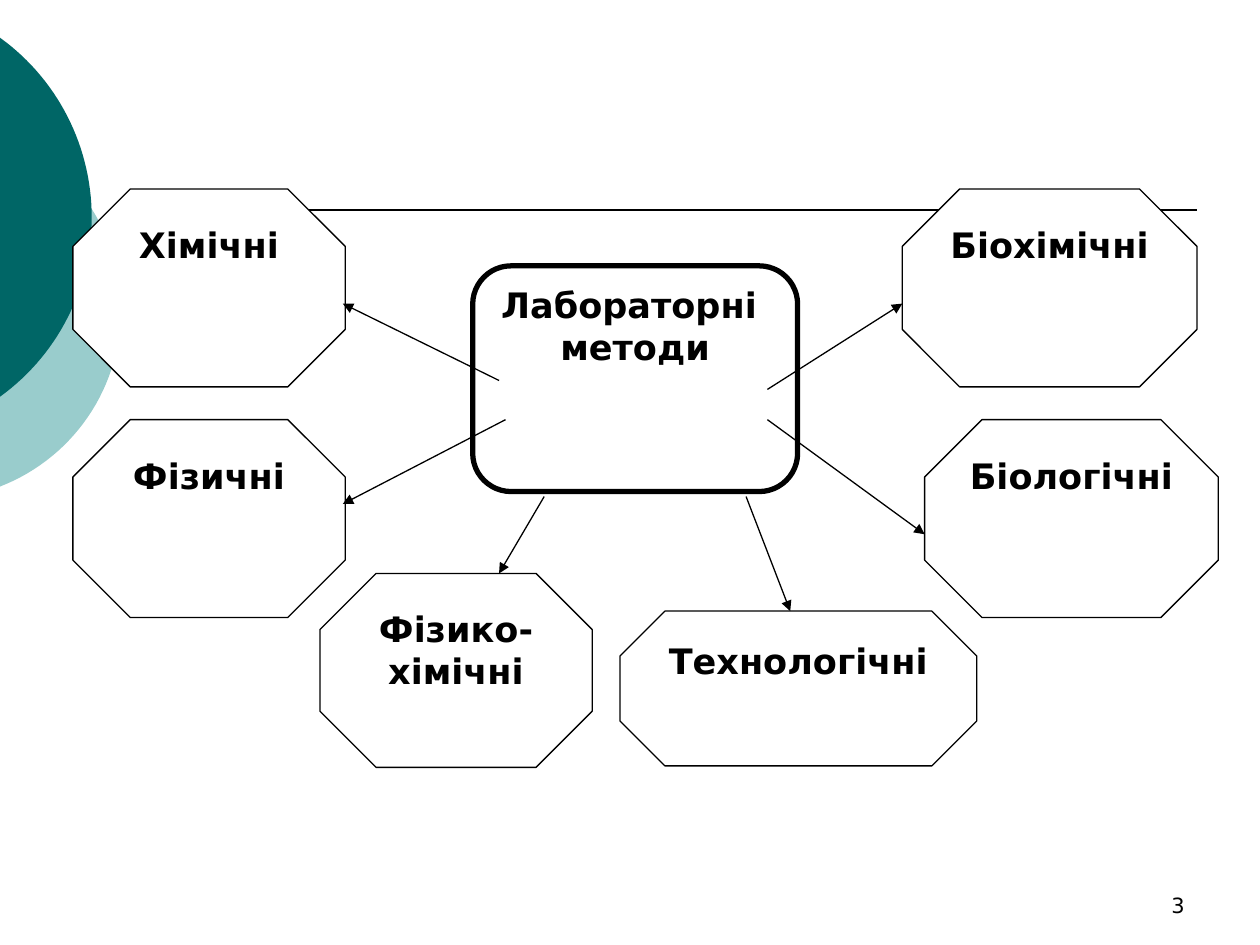
import math
from typing import NamedTuple

from lxml import etree
from pptx import Presentation
from pptx import util as u
from pptx.dml.color import RGBColor
from pptx.enum import shapes, text
from pptx.oxml.ns import qn

FONT = "DejaVu Sans"
BLACK, WHITE = "000000", "FFFFFF"
TEAL, PALE_TEAL = "006666", "99CCCC"


class Box(NamedTuple):
    """A labelled shape; lengths in centimetres."""
    label: str
    left: float
    top: float
    width: float
    height: float


class Arrow(NamedTuple):
    """Start and end points in centimetres."""
    x1: float
    y1: float
    x2: float
    y2: float


class Segment(NamedTuple):
    """A circle cut off by the slide's left edge."""
    center_y: float
    half_chord: float
    depth: float
    color: str


SEGMENTS = [
    Segment(6.25, 3.56, 2.44, PALE_TEAL),
    Segment(4.38, 3.62, 1.85, TEAL),
]
CENTER = Box("Лабораторні \nметоди", 9.53, 5.36, 6.55, 4.55)
METHODS = [
    Box("Хімічні", 1.47, 3.81, 5.49, 3.99),
    Box("Фізичні", 1.47, 8.46, 5.49, 3.99),
    Box("Біохімічні", 18.19, 3.81, 5.94, 3.99),
    Box("Фізико-хімічні", 6.45, 11.56, 5.49, 3.91),
    Box("Біологічні", 18.64, 8.46, 5.92, 3.99),
    Box("Технологічні", 12.5, 12.32, 7.19, 3.12),
]
ARROWS = [
    Arrow(10.06, 7.67, 6.91, 6.12),
    Arrow(10.19, 8.46, 6.91, 10.16),
    Arrow(10.97, 10.01, 10.06, 11.56),
    Arrow(15.04, 10.01, 15.93, 12.32),
    Arrow(15.47, 7.85, 18.19, 6.12),
    Arrow(15.47, 8.46, 18.64, 10.77),
]


def rgb(value: str) -> RGBColor:
    return RGBColor.from_string(value)


def format_text(tf, size: float, bold: bool, align) -> None:
    tf.word_wrap = True
    for p in tf.paragraphs:
        p.alignment = align
        for r in p.runs:
            r.font.name = FONT
            r.font.size = u.Pt(size)
            r.font.bold = bold
            r.font.color.rgb = rgb(BLACK)


def add_segment(s, seg: Segment, steps: int = 60) -> None:
    radius = (seg.half_chord ** 2 + seg.depth ** 2) / (2 * seg.depth)
    center_x = seg.depth - radius
    half_angle = math.atan2(seg.half_chord, -center_x)
    angles = [half_angle * (2 * i / steps - 1) for i in range(steps + 1)]
    points = [(u.Cm(center_x + radius * math.cos(a)),
               u.Cm(seg.center_y + radius * math.sin(a))) for a in angles]
    builder = s.shapes.build_freeform(*points[0])
    builder.add_line_segments(points[1:], close=True)
    sp = builder.convert_to_shape()
    sp.shadow.inherit = False
    sp.fill.solid()
    sp.fill.fore_color.rgb = rgb(seg.color)
    sp.line.fill.background()


def add_box(s, box: Box, kind, adjustment: float, line_width: float) -> None:
    sp = s.shapes.add_shape(kind, *(u.Cm(v) for v in box[1:]))
    sp.adjustments[0] = adjustment
    sp.shadow.inherit = False
    sp.fill.solid()
    sp.fill.fore_color.rgb = rgb(WHITE)
    sp.line.color.rgb = rgb(BLACK)
    sp.line.width = u.Pt(line_width)
    tf = sp.text_frame
    tf.text = box.label
    tf.vertical_anchor = text.MSO_ANCHOR.TOP
    format_text(tf, 20, True, text.PP_ALIGN.CENTER)


def add_line(s, arrow: Arrow, width: float, head: bool = True) -> None:
    cxn = s.shapes.add_connector(shapes.MSO_CONNECTOR.STRAIGHT,
                                 *(u.Cm(v) for v in arrow))
    cxn.line.color.rgb = rgb(BLACK)
    cxn.line.width = u.Pt(width)
    if head:
        etree.SubElement(cxn.line._get_or_add_ln(), qn("a:tailEnd"),
                         type="triangle")
    etree.SubElement(cxn._element.spPr, qn("a:effectLst"))


def add_page_number(s, number: str) -> None:
    tf = s.shapes.add_textbox(u.Cm(18.21), u.Cm(17.35),
                              u.Cm(5.92), u.Cm(1.27)).text_frame
    tf.text = number
    tf.vertical_anchor = text.MSO_ANCHOR.BOTTOM
    format_text(tf, 12, False, text.PP_ALIGN.RIGHT)


def main() -> None:
    prs = Presentation()
    prs.slide_width, prs.slide_height = u.Cm(25.4), u.Cm(19.05)
    s = prs.slides.add_slide(prs.slide_layouts[6])

    for seg in SEGMENTS:
        add_segment(s, seg)
    add_line(s, Arrow(3.81, 4.24, 24.13, 4.24), 1, head=False)
    add_page_number(s, "3")

    add_box(s, CENTER, shapes.MSO_SHAPE.ROUNDED_RECTANGLE, 0.17, 3)
    for method in METHODS:
        add_box(s, method, shapes.MSO_SHAPE.OCTAGON, 0.29, 0.75)
    for arrow in ARROWS:
        add_line(s, arrow, 0.75)

    prs.save("out.pptx")


if __name__ == "__main__":
    main()
